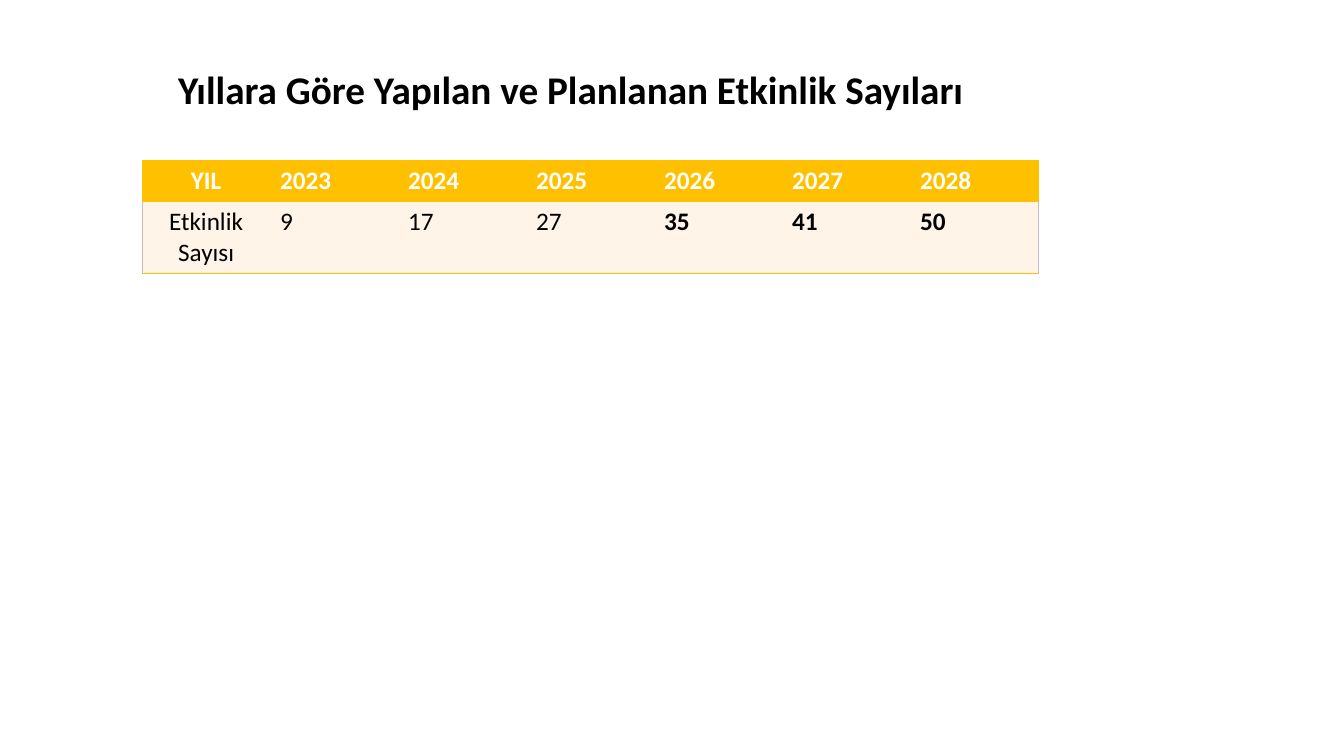
"""Build a slide with a table of completed and planned events by year."""
from lxml.etree import SubElement
from pptx import Presentation
from pptx.dml.color import RGBColor
from pptx.enum.text import MSO_ANCHOR as Anchor, PP_ALIGN as Align
from pptx.oxml.ns import qn
from pptx.util import Pt

TITLE = "Yıllara Göre Yapılan ve Planlanan Etkinlik Sayıları"
ROWS = [
    ["YIL", "2023", "2024", "2025", "2026", "2027", "2028"],
    ["Etkinlik Sayısı", "9", "17", "27", "35", "41", "50"],
]
FIRST_PLANNED_COLUMN = 4
ROW_HEIGHTS = [29.5, 50.5]
TABLE_LEFT, TABLE_TOP, TABLE_WIDTH = 101.5, 114.5, 640
GOLD, CREAM, GREY, WHITE, BLACK = "FFC000", "FFF4E7", "BFBFBF", "FFFFFF", "000000"


def color(value):
    return RGBColor.from_string(value)


def format_text(paragraph, size, text_color, bold, alignment):
    paragraph.alignment = alignment
    font = paragraph.font
    font.name, font.size, font.bold = "Calibri", Pt(size), bold
    font.color.rgb = color(text_color)


def set_border(cell, side, line_color, width):
    properties = cell._tc.get_or_add_tcPr()
    line = SubElement(properties, qn(f"a:ln{side}"), w=str(Pt(width)))
    if line_color:
        fill = SubElement(line, qn("a:solidFill"))
        SubElement(fill, qn("a:srgbClr"), val=line_color)
    else:
        SubElement(line, qn("a:noFill"))


def add_title(slide):
    title = slide.shapes.title
    title.left, title.top, title.width, title.height = map(Pt, (120, 29, 650, 73.5))
    frame = title.text_frame
    frame.text = TITLE
    frame.vertical_anchor = Anchor.MIDDLE
    frame.paragraphs[0].line_spacing = 0.9
    format_text(frame.paragraphs[0], 28, BLACK, True, Align.LEFT)


def add_event_table(slide):
    last = len(ROWS[0]) - 1
    table = slide.shapes.add_table(
        len(ROWS), len(ROWS[0]), Pt(TABLE_LEFT), Pt(TABLE_TOP),
        Pt(TABLE_WIDTH), Pt(sum(ROW_HEIGHTS))).table
    table.horz_banding = False
    for column in table.columns:
        column.width = Pt(TABLE_WIDTH / len(ROWS[0]))
    for row_index, values in enumerate(ROWS):
        table.rows[row_index].height = Pt(ROW_HEIGHTS[row_index])
        header = row_index == 0
        side_color, side_width = (GOLD, 1) if header else (GREY, 0.5)
        for column_index, value in enumerate(values):
            cell = table.cell(row_index, column_index)
            cell.text = value
            set_border(cell, "L", side_color if column_index == 0 else None, side_width)
            set_border(cell, "R", side_color if column_index == last else None, side_width)
            set_border(cell, "T", GOLD, 1)
            set_border(cell, "B", GOLD, 1)
            cell.fill.solid()
            cell.fill.fore_color.rgb = color(GOLD if header else CREAM)
            format_text(cell.text_frame.paragraphs[0], 18, WHITE if header else BLACK,
                        header or column_index >= FIRST_PLANNED_COLUMN,
                        Align.CENTER if column_index == 0 else Align.LEFT)


def main():
    presentation = Presentation()
    presentation.slide_width, presentation.slide_height = Pt(960), Pt(540)
    slide = presentation.slides.add_slide(presentation.slide_layouts[5])
    add_title(slide)
    add_event_table(slide)
    presentation.save("out.pptx")


if __name__ == "__main__":
    main()
